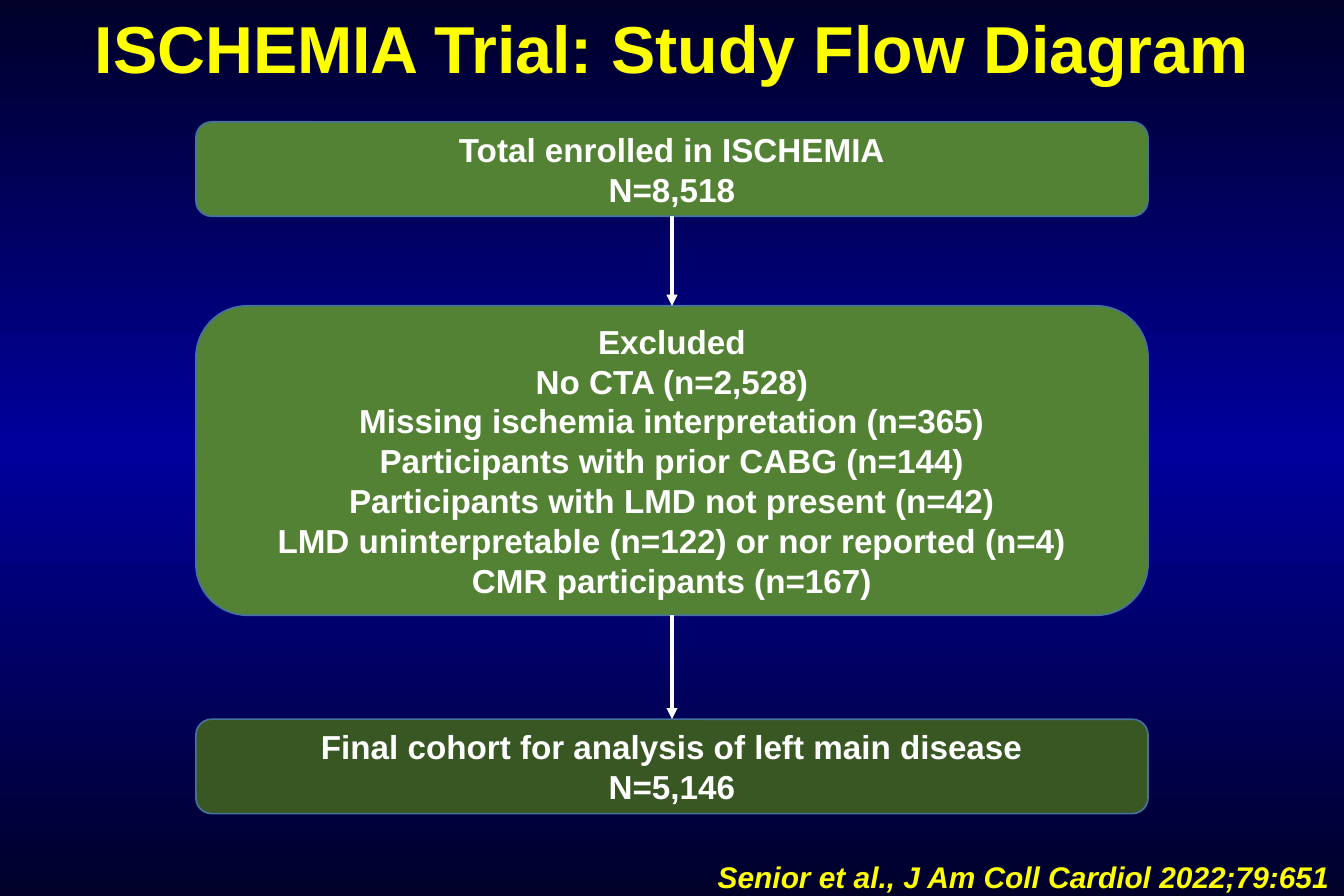
from copy import deepcopy

from lxml import etree
from pptx import Presentation
from pptx import util as u
from pptx.dml.color import RGBColor
from pptx.enum import shapes, text
from pptx.oxml.ns import qn

PX = 9144  # EMU in one px, at 100 px to the inch
FONT = "Arial"
NAVY = RGBColor(0x00, 0x00, 0x28)
BLUE = RGBColor(0x00, 0x00, 0x9C)
YELLOW = RGBColor(0xFF, 0xFF, 0x00)
WHITE = RGBColor(0xFF, 0xFF, 0xFF)
GREEN = RGBColor(0x54, 0x82, 0x35)
DARK_GREEN = RGBColor(0x38, 0x57, 0x23)
OUTLINE = RGBColor(0x43, 0x73, 0x9E)

BOX_LEFT, BOX_WIDTH = 164, 797
STEPS = [
    (102, 79, GREEN, ["Total enrolled in ISCHEMIA", "N=8,518"]),
    (256, 259, GREEN, [
        "Excluded",
        "No CTA (n=2,528)",
        "Missing ischemia interpretation (n=365)",
        "Participants with prior CABG (n=144)",
        "Participants with LMD not present (n=42)",
        "LMD uninterpretable (n=122) or nor reported (n=4)",
        "CMR participants (n=167)",
    ]),
    (602, 79, DARK_GREEN,
     ["Final cohort for analysis of left main disease", "N=5,146"]),
]


class FlowSlide:
    def __init__(self, deck):
        self.page = deck.slides.add_slide(deck.slide_layouts[5])

    def background(self, colors):
        """Fill the page with a vertical gradient of evenly spaced colours."""
        fill = self.page.background.fill
        fill.gradient()
        fill.gradient_angle = 90
        stop_list = next(self.page.element.iter(qn("a:gsLst")))
        while len(stop_list) < len(colors):
            stop_list.append(deepcopy(stop_list[-1]))
        for index, (stop, color) in enumerate(zip(fill.gradient_stops, colors)):
            stop.position = index / (len(colors) - 1)
            stop.color.rgb = color

    def add_lines(self, box, lines, size, color, align, anchor, italic=False):
        frame = box.text_frame
        frame.word_wrap = True
        frame.auto_size = text.MSO_AUTO_SIZE.NONE
        frame.vertical_anchor = anchor
        for index, line in enumerate(lines):
            para = frame.add_paragraph() if index else frame.paragraphs[0]
            para.alignment = align
            span = para.add_run()
            span.text = line
            font = span.font
            font.name, font.size, font.bold = FONT, u.Pt(size), True
            font.italic = italic
            font.color.rgb = color

    def title(self, line, left, top, width, height):
        box = self.page.shapes.title
        box.left, box.top = left * PX, top * PX
        box.width, box.height = width * PX, height * PX
        self.add_lines(box, [line], 40, YELLOW, text.PP_ALIGN.CENTER,
                       text.MSO_ANCHOR.TOP)

    def citation(self, line, left, top, width, height):
        box = self.page.shapes.add_textbox(
            left * PX, top * PX, width * PX, height * PX)
        self.add_lines(box, [line], 18, YELLOW, text.PP_ALIGN.LEFT,
                       text.MSO_ANCHOR.TOP, italic=True)

    def step(self, top, height, color, lines):
        box = self.page.shapes.add_shape(
            shapes.MSO_SHAPE.ROUNDED_RECTANGLE,
            BOX_LEFT * PX, top * PX, BOX_WIDTH * PX, height * PX)
        box.shadow.inherit = False
        box.fill.solid()
        box.fill.fore_color.rgb = color
        box.line.color.rgb = OUTLINE
        box.line.width = u.Pt(1)
        self.add_lines(box, lines, 20, WHITE, text.PP_ALIGN.CENTER,
                       text.MSO_ANCHOR.MIDDLE)
        return box

    def arrow(self, upper, lower):
        """Join the bottom of one box to the top of the next."""
        link = self.page.shapes.add_connector(
            shapes.MSO_CONNECTOR.STRAIGHT, 0, 0, 0, 0)
        link.begin_connect(upper, 2)
        link.end_connect(lower, 0)
        link.line.color.rgb = WHITE
        link.line.width = u.Pt(2.25)
        properties = link.element.spPr
        etree.SubElement(properties.find(qn("a:ln")), qn("a:tailEnd"),
                         type="triangle")
        etree.SubElement(properties, qn("a:effectLst"))


def main():
    deck = Presentation()
    deck.slide_width, deck.slide_height = 1125 * PX, 750 * PX
    slide = FlowSlide(deck)
    slide.background([NAVY, BLUE, NAVY])
    slide.title("ISCHEMIA Trial: Study Flow Diagram", 0, 1, 1125, 77)
    slide.citation("Senior et al., J Am Coll Cardiol 2022;79:651",
                   591, 714, 534, 40)
    boxes = [slide.step(*step) for step in STEPS]
    for upper, lower in zip(boxes, boxes[1:]):
        slide.arrow(upper, lower)
    deck.save("out.pptx")


if __name__ == "__main__":
    main()
